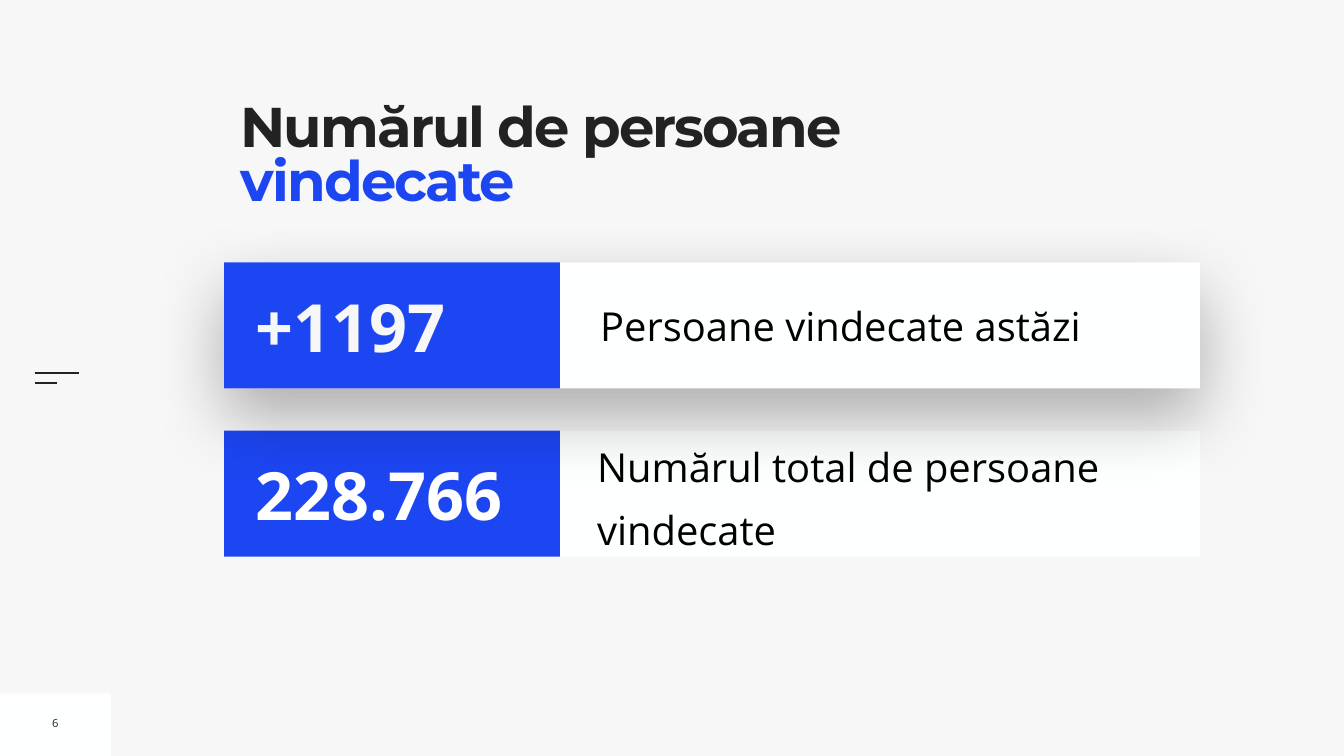
from dataclasses import dataclass

from lxml.etree import SubElement
from pptx import Presentation
from pptx.dml.color import RGBColor
from pptx.enum.shapes import MSO_CONNECTOR, MSO_SHAPE
from pptx.enum.text import MSO_ANCHOR, PP_ALIGN
from pptx.oxml.ns import qn
from pptx.util import Cm, Pt

COLORS = {
    "page": "F7F7F7",
    "panel": "FEFFFF",
    "accent": "1D46F3",
    "ink": "222222",
    "label": "000000",
    "white": "FFFFFF",
}
ROW_LEFT, ROW_WIDTH, ROW_HEIGHT = 11.3, 49.18, 6.35
TILE_WIDTH = 16.92


@dataclass
class Area:
    left: float
    top: float
    width: float
    height: float

    def lengths(self) -> tuple:
        return Cm(self.left), Cm(self.top), Cm(self.width), Cm(self.height)


@dataclass
class StatRow:
    top: float
    value: str
    value_color: str
    label: str
    label_area: Area
    label_inset: float
    label_format: dict
    raised: bool = False


def color(name: str) -> RGBColor:
    return RGBColor.from_string(COLORS[name])


def set_insets(frame, inset: float) -> None:
    for side in ("left", "top", "right", "bottom"):
        setattr(frame, f"margin_{side}", Cm(inset))


def style_span(span, color_name: str, **formats) -> None:
    for name, value in formats.items():
        setattr(span.font, name, value)
    span.font.color.rgb = color(color_name)


def add_rectangle(shapes, area: Area, fill: str):
    box = shapes.add_shape(MSO_SHAPE.RECTANGLE, *area.lengths())
    box.shadow.inherit = False
    box.fill.solid()
    box.fill.fore_color.rgb = color(fill)
    box.line.fill.background()
    return box


def add_text(shapes, area: Area, text: str, color_name: str, size: float,
             bold: bool = False, inset: float = 0.25, wrap: bool = True,
             para_format: dict | None = None) -> None:
    frame = shapes.add_textbox(*area.lengths()).text_frame
    frame.word_wrap = wrap
    frame.vertical_anchor = MSO_ANCHOR.MIDDLE
    set_insets(frame, inset)
    para = frame.paragraphs[0]
    for name, value in (para_format or {}).items():
        setattr(para, name, value)
    span = para.add_run()
    span.text = text
    style_span(span, color_name, name="Open Sans", size=Pt(size), bold=bold)


def add_soft_shadow(box) -> None:
    effects = box._element.spPr.find(qn("a:effectLst"))
    shadow = SubElement(effects, qn("a:outerShdw"), blurRad=str(Pt(100)),
                        dist=str(Pt(40)), dir="5400000", rotWithShape="0")
    tint = SubElement(shadow, qn("a:srgbClr"), val=COLORS["label"])
    SubElement(tint, qn("a:alpha"), val="30000")


def add_stat_row(page, row: StatRow) -> None:
    shapes = page.shapes.add_group_shape().shapes
    panel = add_rectangle(
        shapes, Area(ROW_LEFT, row.top, ROW_WIDTH, ROW_HEIGHT), "panel")
    if row.raised:
        add_soft_shadow(panel)
    add_text(shapes, row.label_area, row.label, "label", 57,
             inset=row.label_inset, para_format=row.label_format)
    add_rectangle(
        shapes, Area(ROW_LEFT, row.top, TILE_WIDTH, ROW_HEIGHT), "accent")
    add_text(shapes, Area(12.65, row.top + 0.89, 15.32, 4.57),
             row.value, row.value_color, 95, bold=True)


def add_menu_line(page, top: float, length: float) -> None:
    left = 1.75
    line = page.shapes.add_connector(
        MSO_CONNECTOR.STRAIGHT, Cm(left), Cm(top), Cm(left + length), Cm(top))
    line.line.color.rgb = color("ink")
    line.line.width = Pt(3)
    SubElement(line._element.spPr, qn("a:effectLst"))


def fill_title(page) -> None:
    title = page.shapes.title
    title.left, title.top, title.width, title.height = Area(
        12.12, 5.26, 33.05, 6.93).lengths()
    title.fill.solid()
    title.fill.fore_color.rgb = color("page")
    frame = title.text_frame
    frame.word_wrap = True
    frame.vertical_anchor = MSO_ANCHOR.TOP
    set_insets(frame, 0)
    para = frame.paragraphs[0]
    para.alignment = PP_ALIGN.LEFT
    para.line_spacing = 0.8
    for text, color_name in (("Numărul de persoane ", "ink"),
                             ("vindecate", "accent")):
        span = para.add_run()
        span.text = text
        style_span(span, color_name, name="Montserrat", size=Pt(80), bold=True)
        span.font._element.set("spc", "-270")


# The raised row comes last so that its shadow falls on the row below it.
ROWS = (
    StatRow(21.7, "228.766", "white", "Numărul total de persoane vindecate",
            Area(30.1, 21.74, 30.35, 5.99), 0,
            {"line_spacing": 1.3, "space_before": Pt(20)}),
    StatRow(13.23, "+1197", "page", "Persoane vindecate astăzi",
            Area(30, 14.91, 29.87, 2.95), 0.25, {}, raised=True),
)


def main() -> None:
    deck = Presentation()
    deck.slide_width, deck.slide_height = Cm(67.74), Cm(38.1)
    page = deck.slides.add_slide(deck.slide_layouts[5])
    page.background.fill.solid()
    page.background.fill.fore_color.rgb = color("page")

    add_rectangle(page.shapes, Area(0, 34.95, 5.59, 3.15), "panel")
    add_menu_line(page, 18.82, 2.24)
    add_menu_line(page, 19.28, 1.12)
    fill_title(page)
    add_text(page.shapes, Area(2.36, 35.79, 0.86, 1.3), "6", "ink", 16,
             wrap=False, para_format={"alignment": PP_ALIGN.CENTER})
    for row in ROWS:
        add_stat_row(page, row)
    deck.save("out.pptx")


if __name__ == "__main__":
    main()
